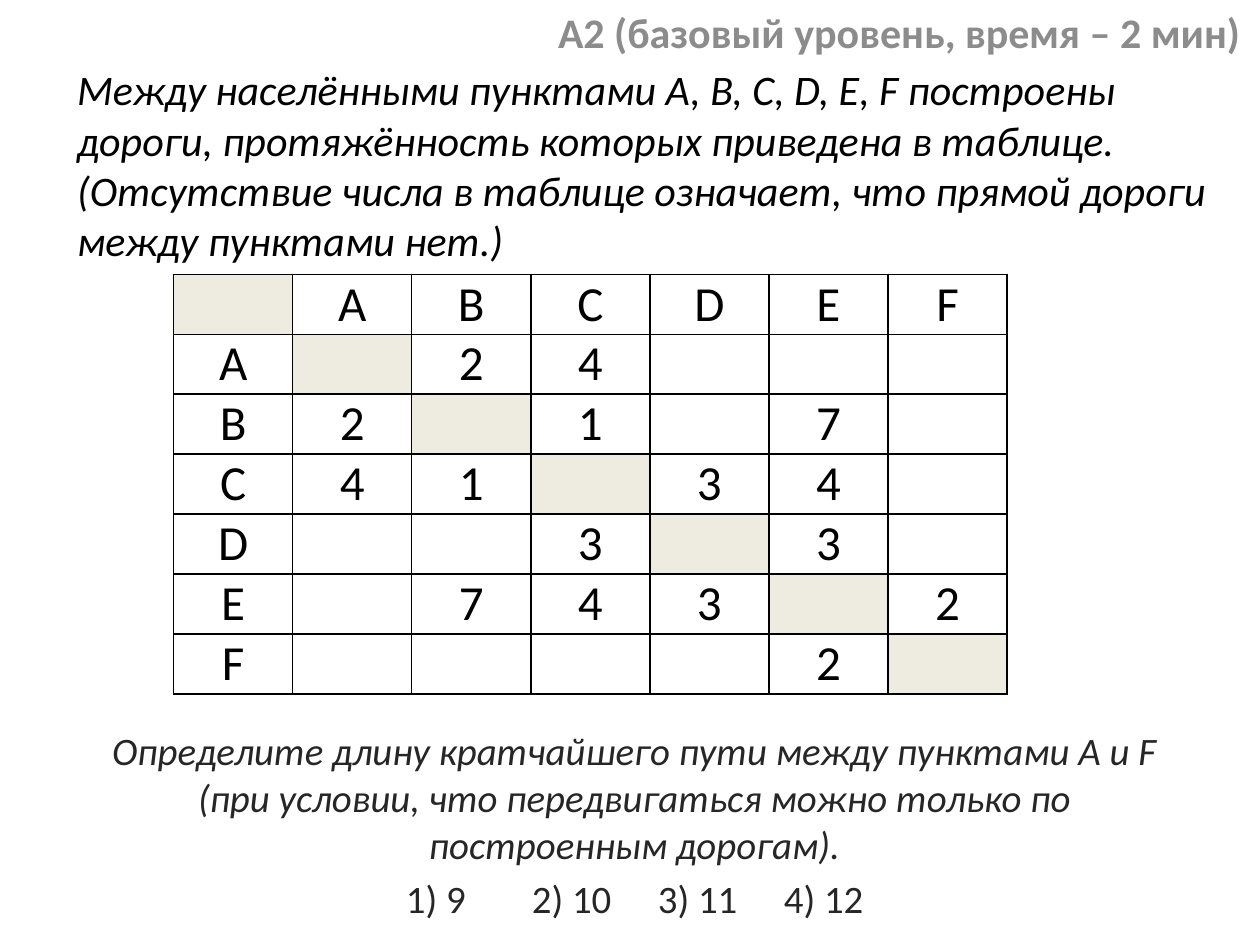
"""Build a slide with a shortest-road exam task and its distance table."""
from dataclasses import dataclass

from lxml import etree
from pptx import Presentation
from pptx import util as u
from pptx.dml.color import RGBColor
from pptx.enum import text
from pptx.oxml import ns


@dataclass(frozen=True)
class Theme:
    """Colours, font and type sizes of the slide."""
    font: str = "Calibri"
    ink: str = "000000"
    soft: str = "262626"
    muted: str = "8C8C8C"
    paper: str = "FFFFFF"
    shade: str = "EEECE1"
    heading: float = 24
    body: float = 22.2
    cell: float = 28


THEME = Theme()
TOWNS = "ABCDEF"
ROADS = {"AB": 2, "AC": 4, "BC": 1, "BE": 7, "CD": 3, "CE": 4, "DE": 3, "EF": 2}
CONDITION = (
    "Между населёнными пунктами A, B, C, D, E, F построены дороги, "
    "протяжённость которых приведена в таблице. (Отсутствие числа в таблице "
    "означает, что прямой дороги между пунктами нет.)"
)
QUESTION = (
    "Определите длину кратчайшего пути между пунктами A и F "
    "(при условии, что передвигаться можно только по построенным дорогам)."
)
ANSWERS = "1) 9 \t2) 10 \t3) 11 \t4) 12"


def write(p, words, size, color=THEME.ink, bold=False, italic=False,
          align=text.PP_ALIGN.LEFT, before=0):
    """Add one formatted run to a paragraph."""
    p.alignment = align
    p.space_before = u.Pt(before)
    r = p.add_run()
    r.text = words
    r.font.name = THEME.font
    r.font.size = u.Pt(size)
    r.font.bold = bold
    r.font.italic = italic
    r.font.color.rgb = RGBColor.from_string(color)


def place(sp, left, top, width, height, anchor):
    """Move a placeholder and return its text frame."""
    sp.left, sp.top = u.Cm(left), u.Cm(top)
    sp.width, sp.height = u.Cm(width), u.Cm(height)
    tf = sp.text_frame
    tf.word_wrap = True
    tf.auto_size = text.MSO_AUTO_SIZE.NONE
    tf.vertical_anchor = anchor
    return tf


def add_label(s):
    """Add the level and time label at the top right."""
    sp = s.shapes.add_textbox(u.Cm(11), u.Cm(0), u.Cm(14.4), u.Cm(1.27))
    tf = sp.text_frame
    tf.word_wrap = False
    tf.auto_size = text.MSO_AUTO_SIZE.SHAPE_TO_FIT_TEXT
    write(tf.paragraphs[0], "A2 (базовый уровень, время – 2 мин)",
          THEME.heading, THEME.muted, bold=True)


def add_condition(s):
    """Fill the title with the condition of the task."""
    tf = place(s.shapes.title, 1.3, 1.12, 23.39, 4.39, text.MSO_ANCHOR.MIDDLE)
    write(tf.paragraphs[0], CONDITION, THEME.heading, italic=True)


def add_question(s):
    """Fill the subtitle with the question and the answers."""
    tf = place(s.placeholders[1], 1.9, 14.53, 21.79, 3.48, text.MSO_ANCHOR.TOP)
    for p, words, italic in ((tf.paragraphs[0], QUESTION, True),
                             (tf.add_paragraph(), ANSWERS, False)):
        write(p, words, THEME.body, THEME.soft, italic=italic,
              align=text.PP_ALIGN.CENTER, before=4.4)


def add_borders(cell):
    """Draw a one-point line on every side of a cell."""
    tc_pr = cell._tc.get_or_add_tcPr()
    for side in ("lnL", "lnR", "lnT", "lnB"):
        ln = etree.SubElement(tc_pr, ns.qn(f"a:{side}"), w=str(u.Pt(1)))
        fill = etree.SubElement(ln, ns.qn("a:solidFill"))
        etree.SubElement(fill, ns.qn("a:srgbClr"), val=THEME.ink)


def format_cell(cell, words, color):
    """Set borders, fill, insets and text of a cell."""
    add_borders(cell)
    cell.fill.solid()
    cell.fill.fore_color.rgb = RGBColor.from_string(color)
    cell.margin_left = cell.margin_right = u.Cm(0.17)
    cell.margin_top = cell.margin_bottom = 0
    cell.vertical_anchor = text.MSO_ANCHOR.MIDDLE
    if words:
        write(cell.text_frame.paragraphs[0], words, THEME.cell,
              align=text.PP_ALIGN.CENTER)


def add_distances(s):
    """Add the symmetric table of road lengths."""
    names = ["", *TOWNS]
    n = len(names)
    table = s.shapes.add_table(n, n, u.Cm(3.5), u.Cm(5.53),
                               u.Cm(16.8), u.Cm(8.3)).table
    table.first_row = table.horz_banding = False
    for i, row in enumerate(names):
        for j, col in enumerate(names):
            road = "".join(sorted(row + col))
            words = str(ROADS.get(road, "")) if i and j else road
            format_cell(table.cell(i, j), words,
                        THEME.shade if i == j else THEME.paper)


def main():
    """Build and save the slide."""
    prs = Presentation()
    prs.slide_width, prs.slide_height = u.Cm(25.4), u.Cm(19.05)
    s = prs.slides.add_slide(prs.slide_layouts[0])
    add_condition(s)
    add_question(s)
    add_distances(s)
    add_label(s)
    prs.save("out.pptx")


if __name__ == "__main__":
    main()
